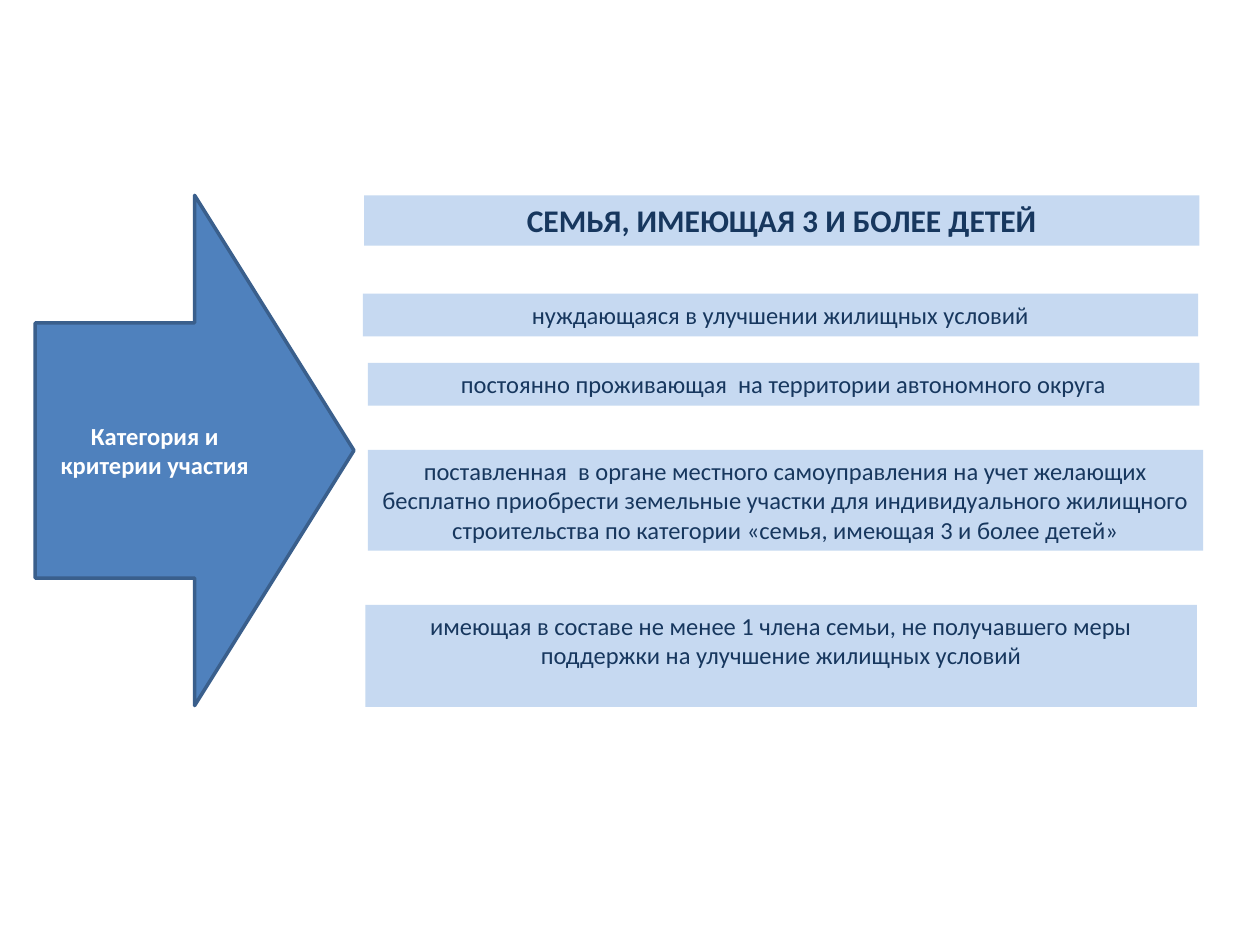
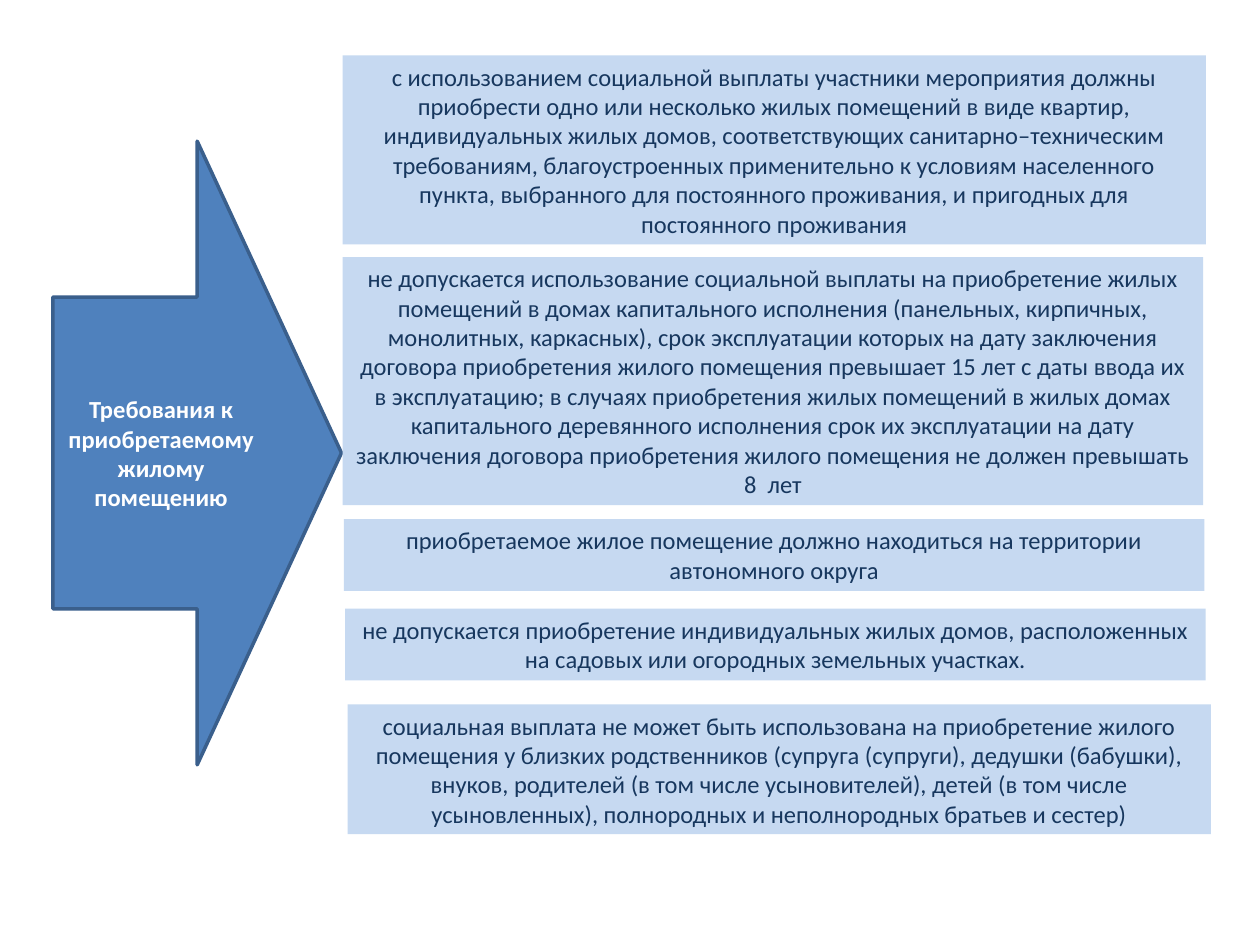
from pptx import Presentation
from pptx.dml.color import RGBColor
from pptx.enum.shapes import MSO_SHAPE
from pptx.enum.text import MSO_ANCHOR, PP_ALIGN
from pptx.util import Emu, Pt

PX = 9144
RECT, ARROW = MSO_SHAPE.RECTANGLE, MSO_SHAPE.RIGHT_ARROW
TOP, MIDDLE = MSO_ANCHOR.TOP, MSO_ANCHOR.MIDDLE
CENTER = PP_ALIGN.CENTER
PALE = RGBColor(0xC6, 0xD9, 0xF1)
NAVY = RGBColor(0x17, 0x37, 0x5E)
BLUE = RGBColor(0x4F, 0x81, 0xBD)
EDGE = RGBColor(0x3A, 0x5F, 0x8C)
WHITE = RGBColor(0xFF, 0xFF, 0xFF)

PAGES = [
    (("Категория и критерии участия", (28, 155, 253, 405)), [
        ("СЕМЬЯ, ИМЕЮЩАЯ 3 И БОЛЕЕ ДЕТЕЙ", (289, 155, 663, 40), 18, True),
        ("нуждающаяся в улучшении жилищных условий", (288, 233, 663, 34)),
        ("постоянно проживающая  на территории автономного округа",
         (292, 288, 660, 34)),
        ("поставленная  в органе местного самоуправления на учет желающих "
         "бесплатно приобрести земельные участки для индивидуального "
         "жилищного строительства по категории «семья, имеющая 3 и более "
         "детей»", (292, 357, 663, 80)),
        ("имеющая в составе не менее 1 члена семьи, не получавшего меры "
         "поддержки на улучшение жилищных условий", (290, 480, 660, 81)),
    ]),
    (("Требования к приобретаемому жилому помещению", (42, 112, 229, 495)), [
        ("с использованием социальной выплаты участники мероприятия должны "
         "приобрести одно или несколько жилых помещений в виде квартир, "
         "индивидуальных жилых домов, соответствующих санитарно–техническим "
         "требованиям, благоустроенных применительно к условиям населенного "
         "пункта, выбранного для постоянного проживания, и пригодных для "
         "постоянного проживания", (272, 44, 685, 150)),
        ("не допускается использование социальной выплаты на приобретение "
         "жилых помещений в домах капитального исполнения (панельных, "
         "кирпичных, монолитных, каркасных), срок эксплуатации которых на "
         "дату заключения договора приобретения жилого помещения превышает "
         "15 лет с даты ввода их в эксплуатацию; в случаях приобретения "
         "жилых помещений в жилых домах капитального деревянного исполнения "
         "срок их эксплуатации на дату заключения договора приобретения "
         "жилого помещения не должен превышать 8  лет", (272, 204, 683, 197)),
        ("приобретаемое жилое помещение должно находиться на территории "
         "автономного округа", (273, 412, 683, 57)),
        ("не допускается приобретение индивидуальных жилых домов, "
         "расположенных на садовых или огородных земельных участках.",
         (274, 483, 683, 57)),
        ("социальная выплата не может быть использована на приобретение "
         "жилого помещения у близких родственников (супруга (супруги), "
         "дедушки (бабушки), внуков, родителей (в том числе усыновителей), "
         "детей (в том числе усыновленных), полнородных и неполнородных "
         "братьев и сестер)", (276, 559, 685, 103)),
    ]),
]


class Deck:
    """Holds the shared style and the current slide."""

    def __init__(self, wide, high):
        self.prs = Presentation()
        self.prs.slide_width, self.prs.slide_height = wide * PX, high * PX
        self.slide = None

    def page(self):
        self.slide = self.prs.slides.add_slide(self.prs.slide_layouts[6])

    def shape(self, kind, text, box, fill, anchor, color, size, bold):
        item = self.slide.shapes.add_shape(kind, *(Emu(n * PX) for n in box))
        item.shadow.inherit = False
        item.fill.solid()
        item.fill.fore_color.rgb = fill
        item.line.fill.background()
        frame = item.text_frame
        frame.word_wrap, frame.vertical_anchor = True, anchor
        para = frame.paragraphs[0]
        para.alignment = CENTER
        run = para.add_run()
        run.text = text
        style = {"name": "Calibri", "size": Pt(size), "bold": bold}
        for key, value in style.items():
            setattr(run.font, key, value)
        run.font.color.rgb = color
        return item

    def arrow(self, text, box):
        item = self.shape(ARROW, text, box, BLUE, MIDDLE, WHITE, 14, True)
        item.line.color.rgb = EDGE
        item.line.width = Pt(2)

    def panel(self, text, box, size=14, bold=False):
        self.shape(RECT, text, box, PALE, TOP, NAVY, size, bold)


def main():
    deck = Deck(1000, 750)
    for arrow, panels in PAGES:
        deck.page()
        deck.arrow(*arrow)
        for panel in panels:
            deck.panel(*panel)
    deck.prs.save("out.pptx")


if __name__ == "__main__":
    main()
